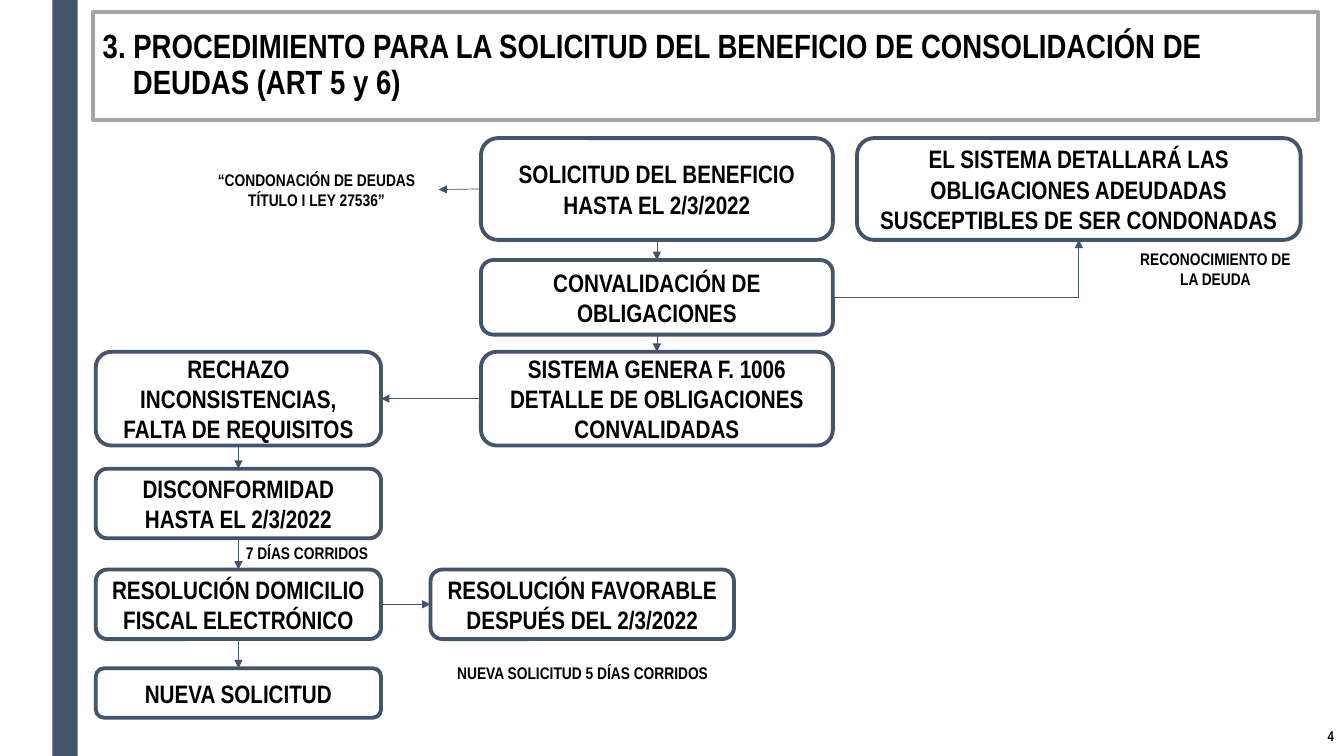
from lxml.etree import SubElement
from pptx import Presentation
from pptx.dml.color import RGBColor
from pptx.enum.shapes import MSO_CONNECTOR as CONNECTOR, MSO_SHAPE as SHAPE
from pptx.enum.text import MSO_ANCHOR as ANCHOR, PP_ALIGN as ALIGN
from pptx.oxml.ns import qn
from pptx.util import Inches, Pt

SLATE = RGBColor(0x44, 0x54, 0x6A)
GRAY = RGBColor(0xA5, 0xA5, 0xA5)
WHITE = RGBColor(0xFF, 0xFF, 0xFF)
BLACK = RGBColor(0, 0, 0)
FONT = "Arial Narrow"
TOP, LEFT, BOTTOM, RIGHT = range(4)

TITLE = ("3. PROCEDIMIENTO PARA LA SOLICITUD DEL BENEFICIO DE "
         "CONSOLIDACIÓN DE DEUDAS (ART 5 y 6)")
PAGE_NUMBER = "4"

COLUMNS = {
    "rechazo": (0.95, 2.83),
    "favorable": (4.27, 3.01),
    "solicitud": (4.77, 3.49),
    "sistema": (8.5, 4.4),
}

STEPS = {
    "solicitud": ("solicitud", 1.37, 1.01, ["SOLICITUD DEL BENEFICIO", "HASTA EL 2/3/2022"]),
    "detalle": ("sistema", 1.37, 1.01,
                ["EL SISTEMA DETALLARÁ LAS OBLIGACIONES ADEUDADAS SUSCEPTIBLES DE SER CONDONADAS"]),
    "convalidación": ("solicitud", 2.58, 0.74, ["CONVALIDACIÓN DE OBLIGACIONES"]),
    "formulario": ("solicitud", 3.49, 0.93,
                   ["SISTEMA GENERA F. 1006 DETALLE DE OBLIGACIONES CONVALIDADAS"]),
    "rechazo": ("rechazo", 3.49, 0.93, ["RECHAZO", "INCONSISTENCIAS, FALTA DE REQUISITOS"]),
    "disconformidad": ("rechazo", 4.65, 0.69, ["DISCONFORMIDAD", "HASTA EL 2/3/2022"]),
    "resolución": ("rechazo", 5.65, 0.69, ["RESOLUCIÓN DOMICILIO FISCAL ELECTRÓNICO"]),
    "nueva": ("rechazo", 6.63, 0.49, ["NUEVA SOLICITUD"]),
    "favorable": ("favorable", 5.65, 0.69, ["RESOLUCIÓN FAVORABLE DESPUÉS DEL 2/3/2022"]),
}

NOTES = {
    "condonación": (1.93, 1.63, 2.42, 0.5, ["“CONDONACIÓN DE DEUDAS", "TÍTULO I LEY 27536”"]),
    "reconocimiento": (11.21, 2.42, 1.69, 0.5, ["RECONOCIMIENTO DE LA DEUDA"]),
    "plazo": (2.2, 5.34, 1.69, 0.3, ["7 DÍAS CORRIDOS"]),
    "nuevo plazo": (4.11, 6.53, 3.34, 0.3, ["NUEVA SOLICITUD 5 DÍAS CORRIDOS"]),
}

ARROWS = [
    ("solicitud", LEFT, "condonación", RIGHT),
    ("solicitud", BOTTOM, "convalidación", TOP),
    ("convalidación", BOTTOM, "formulario", TOP),
    ("convalidación", RIGHT, "detalle", BOTTOM),
    ("formulario", LEFT, "rechazo", RIGHT),
    ("rechazo", BOTTOM, "disconformidad", TOP),
    ("disconformidad", BOTTOM, "resolución", TOP),
    ("resolución", BOTTOM, "nueva", TOP),
    ("resolución", RIGHT, "favorable", LEFT),
]


def write(shape, lines, size, align=ALIGN.CENTER, anchor=ANCHOR.MIDDLE):
    frame = shape.text_frame
    frame.word_wrap = True
    frame.vertical_anchor = anchor
    for index, line in enumerate(lines):
        paragraph = frame.add_paragraph() if index else frame.paragraphs[0]
        paragraph.alignment = align
        run = paragraph.add_run()
        run.text = line
        run.font.name = FONT
        run.font.size = Pt(size)
        run.font.bold = True
        run.font.color.rgb = BLACK


def add_box(slide, kind, bounds, fill=None, border=None):
    shape = slide.shapes.add_shape(kind, *map(Inches, bounds))
    shape.shadow.inherit = False
    if fill is None:
        shape.fill.background()
    else:
        shape.fill.solid()
        shape.fill.fore_color.rgb = fill
    if border is None:
        shape.line.fill.background()
    else:
        shape.line.color.rgb = border
        shape.line.width = Pt(2.75)
    return shape


def add_note(slide, bounds, lines, size, align=ALIGN.CENTER, anchor=ANCHOR.TOP):
    note = slide.shapes.add_textbox(*map(Inches, bounds))
    write(note, lines, size, align, anchor)
    return note


def add_arrow(slide, source, source_side, target, target_side):
    bent = (source_side - target_side) % 2 == 1
    kind = CONNECTOR.ELBOW if bent else CONNECTOR.STRAIGHT
    connector = slide.shapes.add_connector(kind, 0, 0, 0, 0)
    connector.begin_connect(source, source_side)
    connector.end_connect(target, target_side)
    connector.line.color.rgb = SLATE
    connector.line.width = Pt(0.5)
    properties = connector._element.spPr
    if bent:
        properties.find(qn("a:prstGeom")).set("prst", "bentConnector2")
    SubElement(properties.find(qn("a:ln")), qn("a:tailEnd"), type="triangle")
    SubElement(properties, qn("a:effectLst"))


def main():
    presentation = Presentation()
    presentation.slide_width = Inches(13.33)
    presentation.slide_height = Inches(7.5)
    slide = presentation.slides.add_slide(presentation.slide_layouts[6])

    add_box(slide, SHAPE.RECTANGLE, (0.52, 0, 0.25, 7.5), fill=SLATE)
    title = add_box(slide, SHAPE.RECTANGLE, (0.92, 0.12, 12.15, 1.07), WHITE, GRAY)
    write(title, [TITLE], 24, ALIGN.LEFT)
    paragraph = title.text_frame.paragraphs[0]
    paragraph.line_spacing = 0.89
    indent = Inches(0.3)
    paragraph_properties = paragraph._p.get_or_add_pPr()
    paragraph_properties.set("marL", str(indent))
    paragraph_properties.set("indent", str(-indent))

    add_note(slide, (11.9, 7.1, 1.43, 0.4), [PAGE_NUMBER], 10, ALIGN.RIGHT, ANCHOR.MIDDLE)

    nodes = {}
    for name, (column, top, height, lines) in STEPS.items():
        left, width = COLUMNS[column]
        nodes[name] = add_box(slide, SHAPE.ROUNDED_RECTANGLE, (left, top, width, height),
                              border=SLATE)
        write(nodes[name], lines, 18)
    for name, (*bounds, lines) in NOTES.items():
        nodes[name] = add_note(slide, bounds, lines, 12)
    for source, source_side, target, target_side in ARROWS:
        add_arrow(slide, nodes[source], source_side, nodes[target], target_side)

    presentation.save("out.pptx")


if __name__ == "__main__":
    main()
